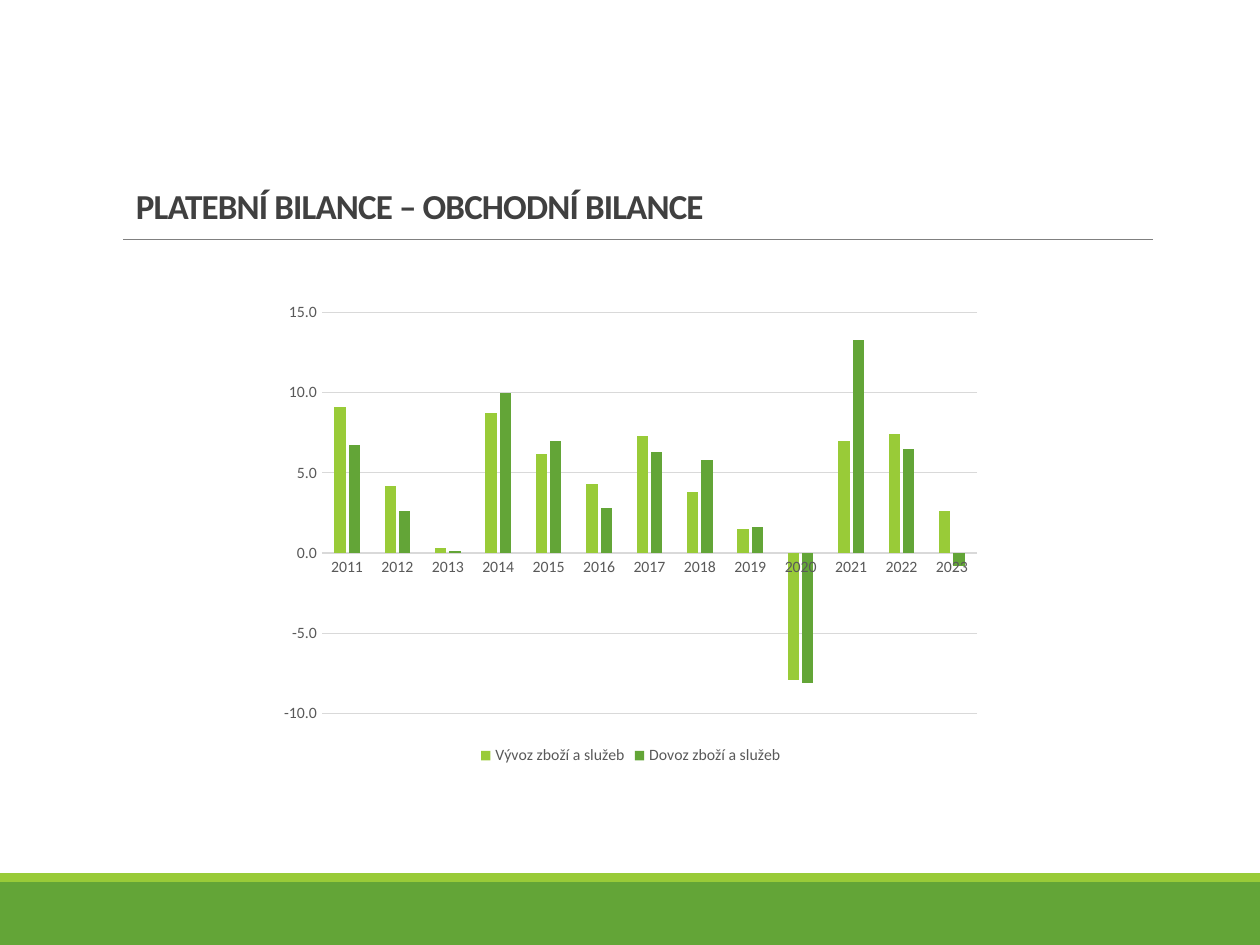
from dataclasses import dataclass

from lxml import etree
from pptx import Presentation
from pptx.chart.data import CategoryChartData
from pptx.dml.color import RGBColor
from pptx.enum import chart as ch, shapes, text
from pptx.oxml.ns import qn
from pptx.util import Inches, Pt

FONT = "Calibri"
LIME, GREEN = "99CB38", "63A537"
DARK, GREY, PALE = "404040", "595959", "D9D9D9"


@dataclass
class Band:
    top: float
    height: float
    color: str


@dataclass
class Flow:
    name: str
    color: str
    vals: list[float]


BANDS = [Band(7, 0.5, GREEN), Band(6.93, 0.07, LIME)]
FLOWS = [
    Flow("Vývoz zboží a služeb", LIME,
         [9.1, 4.2, 0.3, 8.7, 6.2, 4.3, 7.3, 3.8, 1.5, -7.9, 7, 7.4, 2.6]),
    Flow("Dovoz zboží a služeb", GREEN,
         [6.7, 2.6, 0.1, 10, 7, 2.8, 6.3, 5.8, 1.6, -8.1, 13.3, 6.5, -0.8]),
]


def paint(fmt, color: str) -> None:
    fmt.solid()
    fmt.fore_color.rgb = RGBColor.from_string(color)


def style(font, size: float, color: str) -> None:
    font.name = FONT
    font.size = Pt(size)
    font.color.rgb = RGBColor.from_string(color)


def stroke(line, color: str, width: float) -> None:
    paint(line.fill, color)
    line.width = Pt(width)


def draw_band(slide, band: Band) -> None:
    shape = slide.shapes.add_shape(
        shapes.MSO_SHAPE.RECTANGLE, 0, Inches(band.top),
        Inches(10), Inches(band.height))
    shape.shadow.inherit = False
    paint(shape.fill, band.color)
    shape.line.fill.background()


def draw_rule(slide) -> None:
    rule = slide.shapes.add_connector(
        shapes.MSO_CONNECTOR.STRAIGHT, Inches(0.98), Inches(1.9),
        Inches(9.15), Inches(1.9))
    stroke(rule.line, "808080", 0.5)
    etree.SubElement(rule._element.spPr, qn("a:effectLst"))


def draw_title(slide, words: str) -> None:
    box = slide.shapes.add_textbox(
        Inches(0.98), Inches(0.6), Inches(8.5), Inches(1.25))
    frame = box.text_frame
    frame.word_wrap = True
    frame.vertical_anchor = text.MSO_ANCHOR.BOTTOM
    para = frame.paragraphs[0]
    para.line_spacing = 0.85
    run = para.add_run()
    run.text = words
    style(para.font, 20, DARK)
    para.font.bold = True
    run._r.get_or_add_rPr().set("spc", "-50")


def draw_chart(slide, flows: list[Flow]) -> None:
    data = CategoryChartData(number_format="0.0")
    data.categories = [str(year) for year in range(2011, 2024)]
    for flow in flows:
        data.add_series(flow.name, flow.vals)
    chart = slide.shapes.add_chart(
        ch.XL_CHART_TYPE.COLUMN_CLUSTERED, Inches(2.14), Inches(2.33),
        Inches(5.73), Inches(3.78), data).chart
    style(chart.font, 10, "000000")
    chart.has_title = False
    chart.has_legend = True
    chart.legend.position = ch.XL_LEGEND_POSITION.BOTTOM
    chart.legend.include_in_layout = False
    style(chart.legend.font, 9, GREY)

    plot = chart.plots[0]
    plot.gap_width = 219
    plot.overlap = -27
    plot.vary_by_categories = False
    for bars, flow in zip(plot.series, flows):
        paint(bars.format.fill, flow.color)
        bars.invert_if_negative = False

    years, rates = chart.category_axis, chart.value_axis
    for axis in (years, rates):
        axis.major_tick_mark = axis.minor_tick_mark = ch.XL_TICK_MARK.NONE
        style(axis.tick_labels.font, 9, GREY)
    stroke(years.format.line, PALE, 0.75)
    rates.format.line.fill.background()
    rates.minimum_scale, rates.maximum_scale = -10, 15
    rates.major_unit = 5
    rates.has_major_gridlines = True
    stroke(rates.major_gridlines.format.line, PALE, 0.75)
    rates.tick_labels.number_format = "0.0"
    rates.tick_labels.number_format_is_linked = False


def main() -> None:
    deck = Presentation()
    deck.slide_width, deck.slide_height = Inches(10), Inches(7.5)
    slide = deck.slides.add_slide(deck.slide_layouts[6])
    paint(slide.background.fill, "FFFFFF")
    for band in BANDS:
        draw_band(slide, band)
    draw_rule(slide)
    draw_title(slide, "PLATEBNÍ BILANCE – OBCHODNÍ BILANCE")
    draw_chart(slide, FLOWS)
    deck.save("out.pptx")


if __name__ == "__main__":
    main()
